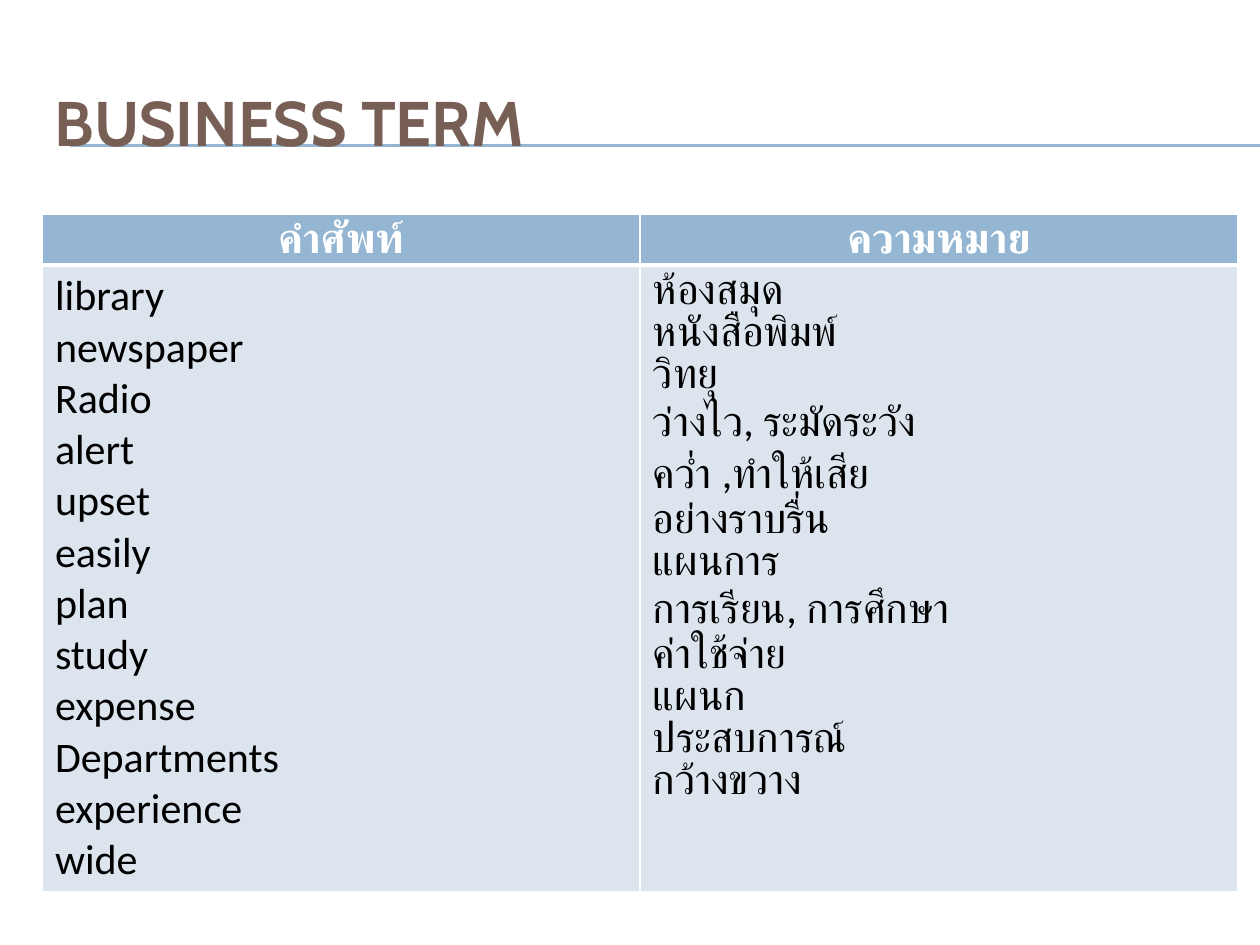
from dataclasses import dataclass

from lxml.etree import SubElement
from pptx import Presentation
from pptx.dml.color import RGBColor
from pptx.enum.shapes import MSO_CONNECTOR
from pptx.enum.text import MSO_ANCHOR, PP_ALIGN
from pptx.oxml.ns import qn
from pptx.util import Pt

PX = 914400 / 126


@dataclass
class CellStyle:
    fill: str
    color: str
    bold: bool
    align: PP_ALIGN
    spacing: float
    margin_x: int
    margin_y: int
    borders: dict[str, int]


HEADER = CellStyle("94B6D2", "FFFFFF", True, PP_ALIGN.CENTER, 1.15, 9, 0,
                   {"L": 1, "R": 1, "T": 1, "B": 3})
BODY = CellStyle("DCE5EE", "000000", False, PP_ALIGN.LEFT, 1.0, 13, 6,
                 {"L": 1, "R": 1, "T": 3, "B": 1})

HEADINGS = ("คำศัพท์", "ความหมาย")
TERMS = [
    ("library", "ห้องสมุด"),
    ("newspaper", "หนังสือพิมพ์"),
    ("Radio", "วิทยุ"),
    ("alert", "ว่างไว, ระมัดระวัง"),
    ("upset", "คว่ำ ,ทำให้เสีย"),
    ("easily", "อย่างราบรื่น"),
    ("plan", "แผนการ"),
    ("study", "การเรียน, การศึกษา"),
    ("expense", "ค่าใช้จ่าย"),
    ("Departments", "แผนก"),
    ("experience", "ประสบการณ์"),
    ("wide", "กว้างขวาง"),
]


def px(n: int) -> int:
    return round(n * PX)


def rgb(value: str) -> RGBColor:
    return RGBColor.from_string(value)


def format_run(r, font: str, size: int, color: str, bold: bool) -> None:
    r.font.name = font
    r.font.size = Pt(size)
    r.font.bold = bold
    r.font.color.rgb = rgb(color)


def add_rule(s, x: int, y: int, right: int) -> None:
    line = s.shapes.add_connector(MSO_CONNECTOR.STRAIGHT, px(x), px(y), px(right), px(y))
    line.line.color.rgb = rgb("94B6D2")
    line.line.width = Pt(0.75)
    SubElement(line._element.spPr, qn("a:effectLst"))


def set_borders(cell, borders: dict[str, int]) -> None:
    tcPr = cell._tc.get_or_add_tcPr()
    for side, width in borders.items():
        ln = SubElement(tcPr, qn(f"a:ln{side}"), w=str(Pt(width)))
        fill = SubElement(ln, qn("a:solidFill"))
        SubElement(fill, qn("a:srgbClr"), val="FFFFFF")


def fill_cell(cell, text: str, style: CellStyle) -> None:
    set_borders(cell, style.borders)
    cell.fill.solid()
    cell.fill.fore_color.rgb = rgb(style.fill)
    cell.margin_left = cell.margin_right = px(style.margin_x)
    cell.margin_top = cell.margin_bottom = px(style.margin_y)
    tf = cell.text_frame
    tf.text = text
    for p in tf.paragraphs:
        p.alignment = style.align
        p.line_spacing = style.spacing
        for r in p.runs:
            format_run(r, "Calibri", 24, style.color, style.bold)
            SubElement(r.font._element, qn("a:cs"), typeface="Angsana New")


def format_title(s, text: str) -> None:
    title = s.shapes.title
    s.shapes._spTree.append(title._element)
    title.left, title.top, title.width, title.height = px(42), px(63), px(1197), px(116)
    tf = title.text_frame
    tf.text = text
    tf.vertical_anchor = MSO_ANCHOR.MIDDLE
    p = tf.paragraphs[0]
    p.alignment = PP_ALIGN.LEFT
    format_run(p.runs[0], "Cabin", 36, "775F55", True)


def add_terms(s) -> None:
    table = s.shapes.add_table(2, 2, px(42), px(214), px(1196), px(677)).table
    table.horz_banding = False
    table.rows[0].height = px(51)
    table.rows[1].height = px(626)
    for col, (heading, words) in enumerate(zip(HEADINGS, zip(*TERMS))):
        fill_cell(table.cell(0, col), heading, HEADER)
        fill_cell(table.cell(1, col), "\n".join(words), BODY)


def main() -> None:
    prs = Presentation()
    prs.slide_width, prs.slide_height = px(1260), px(945)
    s = prs.slides.add_slide(prs.slide_layouts[5])
    for y in (145, 146):
        add_rule(s, 70, y, 1260)
    format_title(s, "BUSINESS TERM")
    add_terms(s)
    prs.save("out.pptx")


if __name__ == "__main__":
    main()
